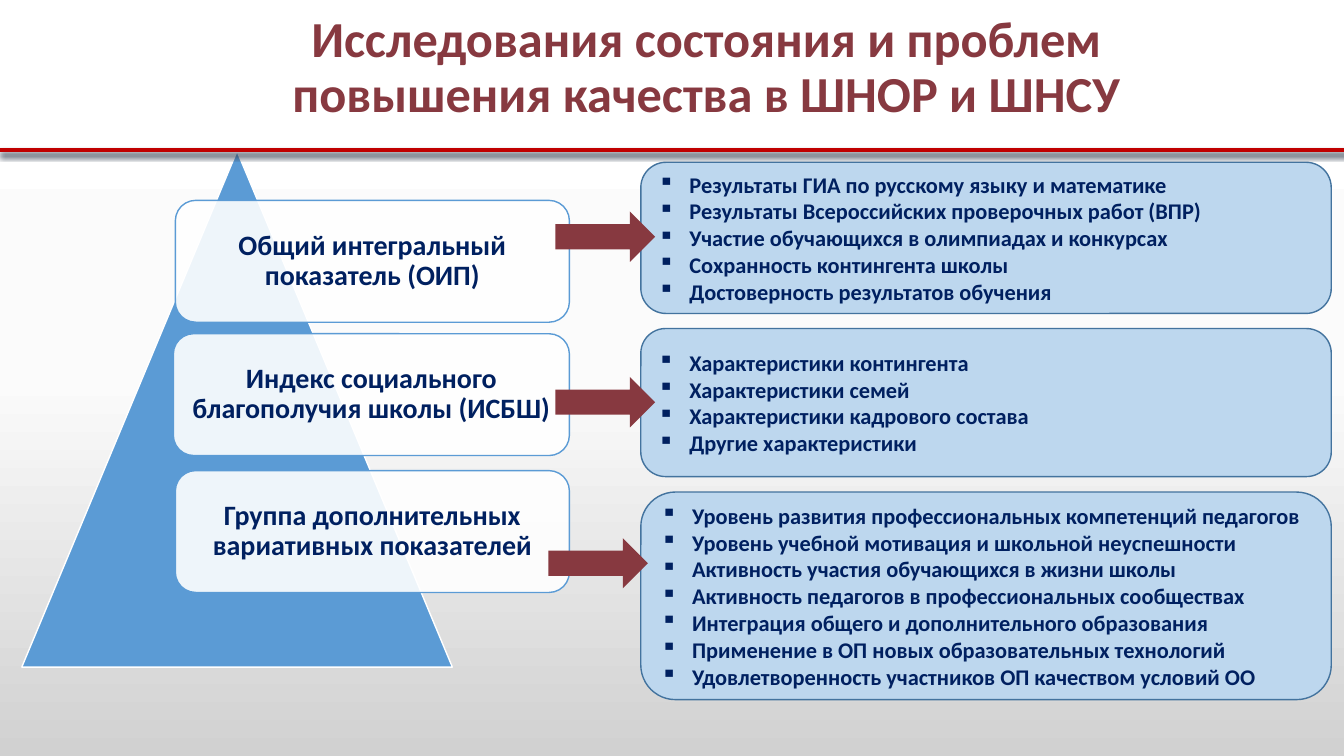
from copy import deepcopy

from lxml import etree
from pptx import Presentation
from pptx import util as u
from pptx.dml.color import RGBColor
from pptx.enum import shapes, text
from pptx.oxml import ns

Cm = u.Cm
MAROON = RGBColor(0x87, 0x39, 0x40)
NAVY = RGBColor(0x00, 0x20, 0x60)
BLUE = RGBColor(0x5B, 0x9B, 0xD5)
PALE_BLUE = RGBColor(0xBD, 0xD7, 0xEE)
STEEL = RGBColor(0x43, 0x73, 0x9E)
RED = RGBColor(0xC0, 0x00, 0x00)
WHITE = RGBColor(0xFF, 0xFF, 0xFF)
OFF_WHITE = RGBColor(0xFB, 0xFB, 0xFB)
GREY = RGBColor(0xD1, 0xD1, 0xD1)

TITLE = "Исследования состояния и проблем повышения качества в ШНОР и ШНСУ"
INDICATORS = [
    ("Общий интегральный показатель (ОИП)", 4.42, 5.05, 9.93),
    ("Индекс социального благополучия школы (ИСБШ)", 4.37, 8.41, 9.98),
    ("Группа дополнительных вариативных показателей", 4.42, 11.86, 9.93),
]
DETAILS = [
    (4.09, 3.81, [
        "Результаты ГИА по русскому языку и математике",
        "Результаты Всероссийских проверочных работ (ВПР)",
        "Участие обучающихся в олимпиадах и конкурсах",
        "Сохранность контингента школы",
        "Достоверность результатов обучения",
    ]),
    (8.28, 3.73, [
        "Характеристики контингента",
        "Характеристики семей",
        "Характеристики кадрового состава",
        "Другие характеристики",
    ]),
    (12.4, 5.23, [
        "Уровень развития профессиональных компетенций педагогов",
        "Уровень учебной мотивация и школьной неуспешности",
        "Активность участия обучающихся в жизни школы",
        "Активность педагогов в профессиональных сообществах",
        "Интеграция общего и дополнительного образования",
        "Применение в ОП новых образовательных технологий",
        "Удовлетворенность участников ОП качеством условий ОО",
    ]),
]
ARROWS = [(14, 5.33), (14, 9.5), (13.82, 13.56)]


def set_background(s):
    fill = s.background.fill
    fill.gradient()
    fill.gradient_angle = 270
    stops = s._element.find(".//" + ns.qn("a:gsLst"))
    stops.insert(0, deepcopy(stops[0]))
    for stop, position, color in zip(fill.gradient_stops, (0, 0.5, 1), (WHITE, OFF_WHITE, GREY)):
        stop.position = position
        stop.color.rgb = color


def add_shape(s, kind, left, top, width, height, fill, line=None):
    sp = s.shapes.add_shape(kind, Cm(left), Cm(top), Cm(width), Cm(height))
    sp.shadow.inherit = False
    sp.fill.solid()
    sp.fill.fore_color.rgb = fill
    if line is None:
        sp.line.fill.background()
    else:
        sp.line.color.rgb = line
        sp.line.width = u.Pt(1)
    return sp


def format_run(p, size, color):
    for r in p.runs:
        r.font.name = "Calibri"
        r.font.size = u.Pt(size)
        r.font.bold = True
        r.font.color.rgb = color


def set_centred(sp, wording, size, color):
    tf = sp.text_frame
    tf.word_wrap = True
    tf.vertical_anchor = text.MSO_ANCHOR.MIDDLE
    tf.text = wording
    p = tf.paragraphs[0]
    p.alignment = text.PP_ALIGN.CENTER
    p.line_spacing = 0.9
    format_run(p, size, color)


def add_title(s):
    sp = s.shapes.add_textbox(Cm(4.29), Cm(0.46), Cm(27.03), Cm(2.54))
    set_centred(sp, TITLE, 36, MAROON)


def add_indicator(s, wording, left, top, width):
    sp = add_shape(s, shapes.MSO_SHAPE.ROUNDED_RECTANGLE, left, top, width, 3.07, WHITE, BLUE)
    color = sp.fill._xPr.find(".//" + ns.qn("a:srgbClr"))
    etree.SubElement(color, ns.qn("a:alpha"), val="90000")
    tf = sp.text_frame
    tf.margin_left = tf.margin_right = tf.margin_top = tf.margin_bottom = Cm(0.2)
    set_centred(sp, wording, 20, NAVY)


def add_bullet(p):
    pPr = p._p.get_or_add_pPr()
    pPr.set("marL", str(Cm(0.79)))
    pPr.set("indent", str(-Cm(0.79)))
    etree.SubElement(pPr, ns.qn("a:buChar"), char="▪")


def add_details(s, top, height, items):
    sp = add_shape(s, shapes.MSO_SHAPE.ROUNDED_RECTANGLE, 16.15, top, 17.4, height, PALE_BLUE, STEEL)
    tf = sp.text_frame
    tf.word_wrap = True
    tf.vertical_anchor = text.MSO_ANCHOR.MIDDLE
    tf.text = "\n".join(items)
    for p in tf.paragraphs:
        p.alignment = text.PP_ALIGN.LEFT
        add_bullet(p)
        format_run(p, 16, NAVY)


def add_divider(s):
    line = s.shapes.add_connector(shapes.MSO_CONNECTOR.STRAIGHT, 0, Cm(3.78), Cm(33.99), Cm(3.78))
    line.line.color.rgb = RED
    line.line.width = u.Pt(2.5)
    effects = etree.SubElement(line._element.spPr, ns.qn("a:effectLst"))
    shadow = etree.SubElement(effects, ns.qn("a:outerShdw"), blurRad=str(u.Pt(4)),
                              dist=str(u.Pt(3)), dir="5400000", rotWithShape="0")
    etree.SubElement(shadow, ns.qn("a:srgbClr"), val="333F50")


def main():
    prs = Presentation()
    prs.slide_width = Cm(33.87)
    prs.slide_height = Cm(19.05)
    s = prs.slides.add_slide(prs.slide_layouts[6])
    set_background(s)
    add_title(s)
    add_shape(s, shapes.MSO_SHAPE.ISOSCELES_TRIANGLE, 0.55, 3.81, 10.85, 13, BLUE, WHITE)
    for indicator in INDICATORS:
        add_indicator(s, *indicator)
    for details in DETAILS:
        add_details(s, *details)
    for left, top in ARROWS:
        add_shape(s, shapes.MSO_SHAPE.RIGHT_ARROW, left, top, 2.51, 1.27, MAROON)
    add_divider(s)
    prs.save("out.pptx")


if __name__ == "__main__":
    main()
